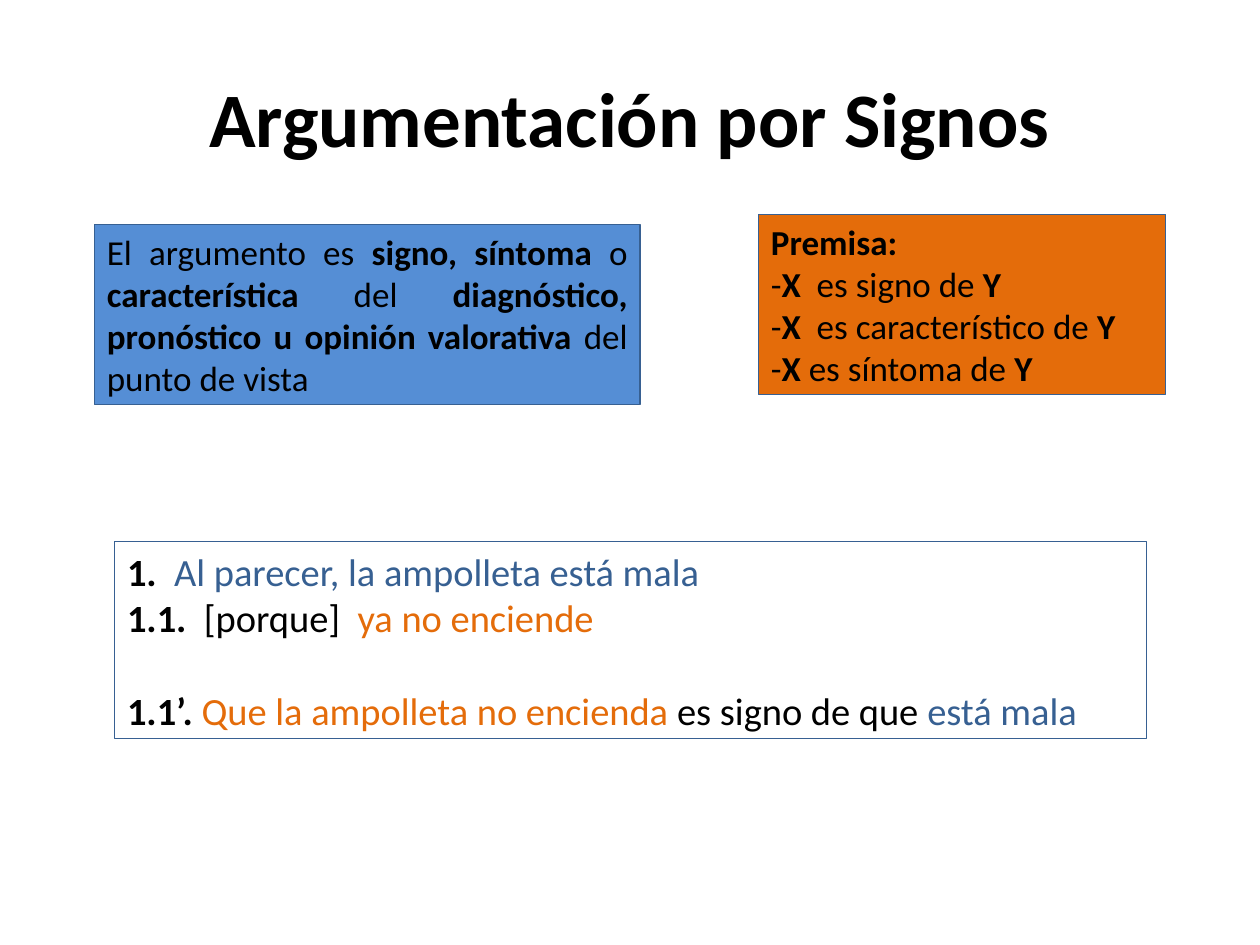
from pptx import Presentation
from pptx.dml.color import RGBColor
from pptx.enum import shapes, text
from pptx.util import Inches, Pt

BLACK = RGBColor(0, 0, 0)
WHITE = RGBColor(255, 255, 255)
SKY = RGBColor(0x55, 0x8E, 0xD5)
NAVY = RGBColor(0x37, 0x60, 0x92)
ORANGE = RGBColor(0xE4, 0x6C, 0x0A)
FONT = "Calibri"


def bold(words):
    return words, True, BLACK


def plain(words, color=BLACK):
    return words, False, color


def add_title(slide, words):
    title = slide.shapes.title
    title.left, title.top = Inches(0.5), Inches(0.3)
    title.width, title.height = Inches(9), Inches(1.25)
    frame = title.text_frame
    frame.text = words
    frame.vertical_anchor = text.MSO_ANCHOR.MIDDLE
    para = frame.paragraphs[0]
    para.alignment = text.PP_ALIGN.CENTER
    font = para.font
    font.name, font.size, font.bold = FONT, Pt(44), True
    font.color.rgb = BLACK


def add_box(slide, place, fill, size, lines):
    """Add a framed box; each line is a list of (words, bold, color)."""
    box = slide.shapes.add_shape(
        shapes.MSO_SHAPE.RECTANGLE, *[Inches(n) for n in place])
    box.shadow.inherit = False
    box.fill.solid()
    box.fill.fore_color.rgb = fill
    box.line.color.rgb = NAVY
    box.line.width = Pt(0.75)
    frame = box.text_frame
    frame.word_wrap = True
    frame.auto_size = text.MSO_AUTO_SIZE.SHAPE_TO_FIT_TEXT
    frame.vertical_anchor = text.MSO_ANCHOR.TOP
    for i, line in enumerate(lines):
        para = frame.add_paragraph() if i else frame.paragraphs[0]
        para.alignment = text.PP_ALIGN.JUSTIFY
        para.font.name, para.font.size = FONT, Pt(size)
        for words, heavy, color in line:
            run = para.add_run()
            run.text = words
            run.font.bold = heavy
            run.font.color.rgb = color
    return box


def main():
    deck = Presentation()
    deck.slide_width, deck.slide_height = Inches(10), Inches(7.5)
    slide = deck.slides.add_slide(deck.slide_layouts[5])
    add_title(slide, "Argumentación por Signos")

    # Definition
    add_box(slide, (0.75, 1.78, 4.33, 1.43), SKY, 20, [[
        plain("El argumento es "), bold("signo, síntoma "), plain("o"),
        bold(" característica"), plain(" del "),
        bold("diagnóstico, pronóstico u opinión valorativa "),
        plain("del punto de vista")]])

    # Premise patterns
    links = (" es signo de ", " es característico de ", "es síntoma de ")
    add_box(slide, (6.02, 1.7, 3.23, 1.43), ORANGE, 20, [
        [bold("Premisa:")],
        *[[plain("-"), bold("X "), plain(link), bold("Y")]
          for link in links]])

    # Worked example
    case = add_box(slide, (0.91, 4.3, 8.19, 1.56), WHITE, 22, [
        [bold("1.  "), plain("Al parecer, la ampolleta está mala", NAVY)],
        [bold("1.1.  "), plain("[porque]  "),
         plain("ya no enciende", ORANGE)],
        [bold("1.1’. "), plain("Que la ampolleta no encienda", ORANGE),
         plain(" es signo de que "), plain("está mala", NAVY)]])
    # One line of air sets the linking premise apart
    case.text_frame.paragraphs[-1].space_before = Pt(26.85)

    deck.save("out.pptx")


if __name__ == "__main__":
    main()
